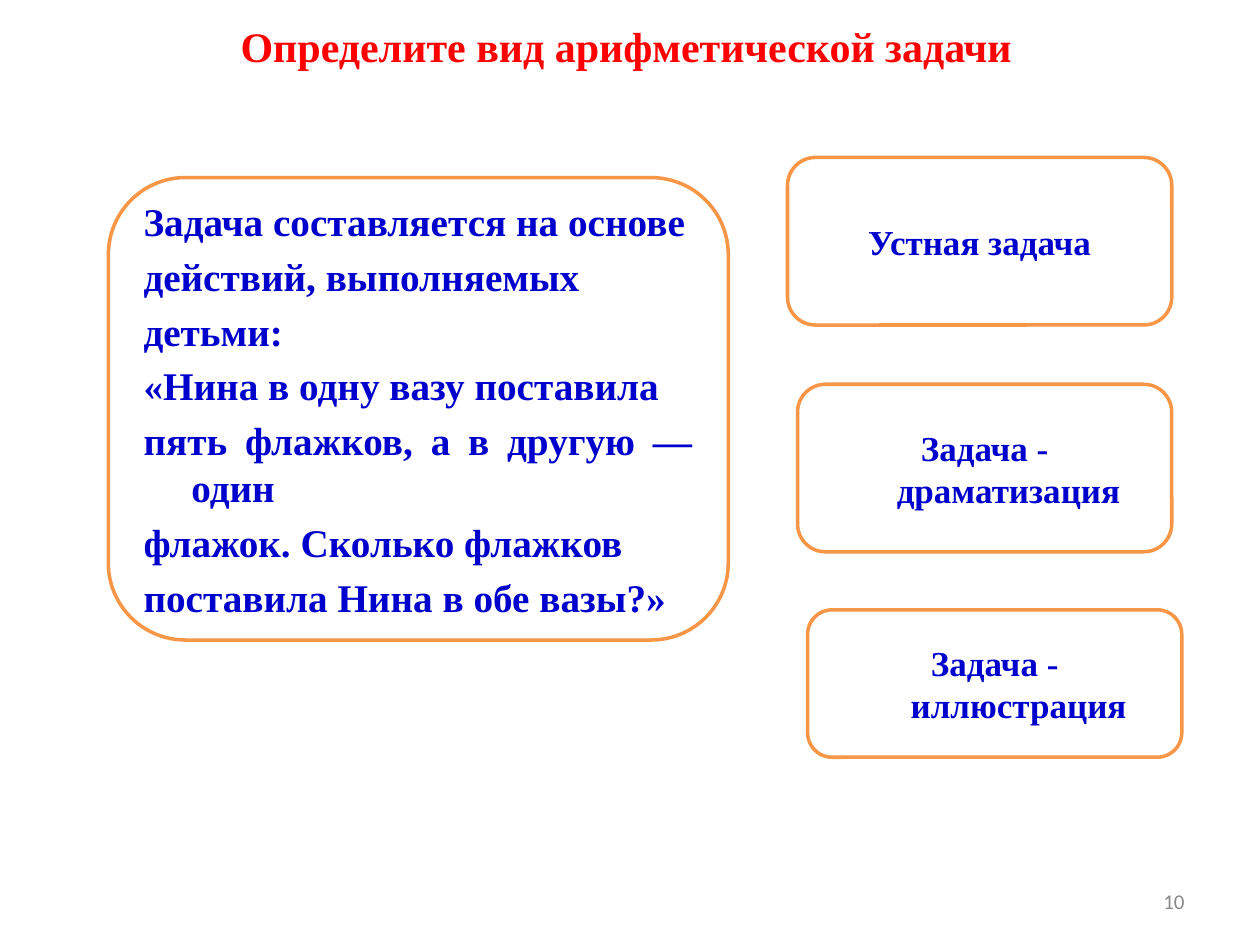
from lxml import etree
from pptx import Presentation
from pptx import util as u
from pptx.dml.color import RGBColor
from pptx.enum import shapes, text
from pptx.oxml.ns import qn

RED = RGBColor(0xFF, 0x00, 0x00)
BLUE = RGBColor(0x00, 0x00, 0xCC)
ORANGE = RGBColor(0xF7, 0x96, 0x46)
WHITE = RGBColor(0xFF, 0xFF, 0xFF)
GREY = RGBColor(0x89, 0x89, 0x89)

SERIF = "Times New Roman"
HANGING = u.Inches(0.38)

HEADING = "Определите вид арифметической задачи"
PROBLEM = [
    "Задача составляется на основе",
    "действий, выполняемых",
    "детьми:",
    "«Нина в одну вазу поставила",
    "пять флажков, а в другую — один",
    "флажок. Сколько флажков",
    "поставила Нина в обе вазы?»",
]
ANSWERS = [
    ("Устная задача", (6.25, 1.25, 3.05, 1.33)),
    ("Задача - драматизация", (6.33, 3.05, 2.97, 1.33)),
    ("Задача - иллюстрация", (6.41, 4.84, 2.97, 1.17)),
]


def place(item, box):
    """Move and size an item to a box given in inches."""
    for side, value in zip(("left", "top", "width", "height"), box):
        setattr(item, side, u.Inches(value))


def write(item, lines, align, size, color, name=SERIF, bold=True, hanging=False):
    """Fill an item with formatted paragraphs, centred vertically."""
    frame = item.text_frame
    frame.word_wrap = True
    frame.auto_size = text.MSO_AUTO_SIZE.NONE
    frame.vertical_anchor = text.MSO_ANCHOR.MIDDLE
    font_format = {"name": name, "size": u.Pt(size), "bold": bold}
    for index, line in enumerate(lines):
        paragraph = frame.paragraphs[0] if index == 0 else frame.add_paragraph()
        paragraph.text = line
        paragraph.alignment = align
        paragraph.space_before = u.Pt(round(size * 0.2, 1) if index else 0)
        if hanging:
            properties = paragraph._p.get_or_add_pPr()
            properties.set("marL", str(HANGING))
            properties.set("indent", str(-HANGING))
            etree.SubElement(properties, qn("a:buNone"))
        font = paragraph.runs[0].font
        for attribute, value in font_format.items():
            setattr(font, attribute, value)
        font.color.rgb = color


def outline(item):
    """Give an item a white fill and an orange border."""
    item.fill.solid()
    item.fill.fore_color.rgb = WHITE
    item.line.color.rgb = ORANGE
    item.line.width = u.Pt(2)


def add_heading(slide):
    """Set the title of the slide."""
    heading = slide.shapes.title
    place(heading, (0.47, 0, 9, 0.72))
    write(heading, [HEADING], text.PP_ALIGN.CENTER, 24, RED)


def add_problem(slide):
    """Set the problem in the body placeholder with rounded corners."""
    problem = slide.placeholders[1]
    place(problem, (0.86, 1.41, 4.92, 3.67))
    geometry = etree.SubElement(problem._element.spPr, qn("a:prstGeom"), prst="roundRect")
    etree.SubElement(geometry, qn("a:avLst"))
    outline(problem)
    write(problem, PROBLEM, text.PP_ALIGN.JUSTIFY, 22.4, BLUE, hanging=True)


def add_answer(slide, label, box):
    """Add one rounded answer card."""
    answer = slide.shapes.add_shape(
        shapes.MSO_SHAPE.ROUNDED_RECTANGLE, *map(u.Inches, box))
    answer.shadow.inherit = False
    outline(answer)
    write(answer, [label], text.PP_ALIGN.CENTER, 20, BLUE, hanging=True)


def add_page_number(slide):
    """Add the page number at the bottom right."""
    number = slide.shapes.add_textbox(*map(u.Inches, (7.17, 6.95, 2.33, 0.4)))
    write(number, ["10"], text.PP_ALIGN.RIGHT, 12, GREY, name="Calibri", bold=False)


def main():
    """Build the slide and save it."""
    deck = Presentation()
    deck.slide_width, deck.slide_height = u.Inches(10), u.Inches(7.5)
    slide = deck.slides.add_slide(deck.slide_layouts[1])
    add_heading(slide)
    add_problem(slide)
    for label, box in ANSWERS:
        add_answer(slide, label, box)
    add_page_number(slide)
    deck.save("out.pptx")


if __name__ == "__main__":
    main()
